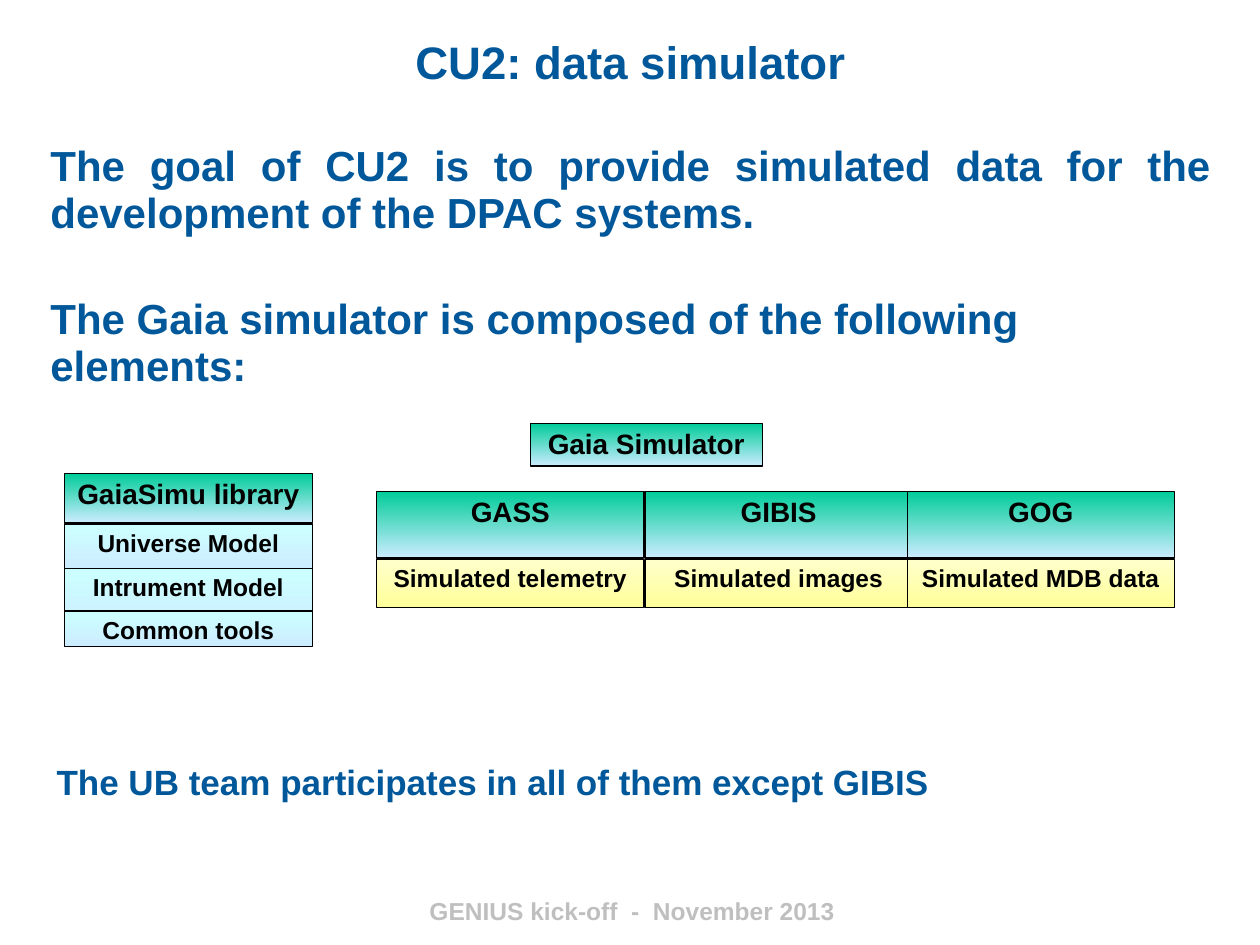
from pptx import Presentation
from pptx.dml.color import RGBColor
from pptx.enum.shapes import MSO_SHAPE
from pptx.enum.text import MSO_ANCHOR, PP_ALIGN
from pptx.oxml.xmlchemy import OxmlElement
from pptx.util import Inches, Pt

RECTANGLE = MSO_SHAPE.RECTANGLE
TOP, MIDDLE = MSO_ANCHOR.TOP, MSO_ANCHOR.MIDDLE
LEFT, CENTER, JUSTIFY = PP_ALIGN.LEFT, PP_ALIGN.CENTER, PP_ALIGN.JUSTIFY

THEME = {
    "font": "Arial",
    "blue": "00589A",
    "black": "000000",
    "gray": "BFBFBF",
    "green": ("00CC99", "CCECFF"),
    "ice": ("CCFFFF", "CCECFF"),
    "yellow": ("FFFFCC", "FFFF99"),
    "title": 26,
    "body": 24,
    "closing": 20,
    "heading": 16,
    "label": 14,
    "spacing": 0.93,
    "outline": 0.75,
}

TITLE = "CU2: data simulator"
STATEMENTS = [
    ("The goal of CU2 is to provide simulated data for the development of the DPAC systems.", JUSTIFY),
    ("The Gaia simulator is composed of the following elements:", LEFT),
]
CLOSING = "The UB team participates in all of them except GIBIS"
FOOTER = "GENIUS kick-off  -  November 2013"

SIMULATOR = ("Gaia Simulator", (4.21, 3.36, 1.84, 0.34))
LIBRARY_LEFT, LIBRARY_WIDTH = 0.51, 1.97
LIBRARY = [
    ("GaiaSimu library", 3.76, 0.39, "green", "heading"),
    ("Universe Model", 4.16, 0.36, "ice", "label"),
    ("Intrument Model", 4.51, 0.5, "ice", "label"),
    ("Common tools", 4.85, 0.28, "ice", "label"),
]
GENERATOR_WIDTH = 2.12
GENERATORS = [
    ("GASS", "Simulated telemetry", 2.99),
    ("GIBIS", "Simulated images", 5.12),
    ("GOG", "Simulated MDB data", 7.2),
]


def place(shape, box):
    shape.left, shape.top, shape.width, shape.height = map(Inches, box)


def style(paragraph, size, color, align):
    paragraph.alignment = align
    for run in paragraph.runs:
        run.font.name = THEME["font"]
        run.font.size = Pt(THEME[size])
        run.font.bold = True
        run.font.color.rgb = RGBColor.from_string(THEME[color])


def write(shape, text, size, color, align, anchor=TOP, wrap=True):
    frame = shape.text_frame
    frame.text = text
    frame.word_wrap = wrap
    frame.vertical_anchor = anchor
    style(frame.paragraphs[0], size, color, align)


def add_line(slide, text, box, size, color, align):
    write(slide.shapes.add_textbox(*map(Inches, box)), text, size, color, align)


def add_block(slide, text, box, gradient, size):
    block = slide.shapes.add_shape(RECTANGLE, *map(Inches, box))
    block.shadow.inherit = False
    block.fill.gradient()
    block.fill.gradient_angle = 270
    for stop, color in zip(block.fill.gradient_stops, THEME[gradient]):
        stop.color.rgb = RGBColor.from_string(color)
    block.line.color.rgb = RGBColor.from_string(THEME["black"])
    block.line.width = Pt(THEME["outline"])
    write(block, text, size, "black", CENTER, wrap=False)
    block.text_frame.paragraphs[0].line_spacing = THEME["spacing"]


def fill_body(body):
    place(body, (0.3, 1.09, 9.41, 1.5))
    frame = body.text_frame
    frame.text = "\n".join(text for text, _ in STATEMENTS)
    frame.vertical_anchor = TOP
    for index, (paragraph, (_, align)) in enumerate(zip(frame.paragraphs, STATEMENTS)):
        properties = paragraph._p.get_or_add_pPr()
        properties.set("marL", "0")
        properties.set("indent", "0")
        properties.append(OxmlElement("a:buNone"))
        paragraph.line_spacing = THEME["spacing"]
        paragraph.space_before = Pt(34 if index else 0)
        style(paragraph, "body", "blue", align)


def main():
    """Build the CU2 data simulator slide."""
    deck = Presentation()
    deck.slide_width, deck.slide_height = Inches(10), Inches(7.5)
    slide = deck.slides.add_slide(deck.slide_layouts[1])
    title, body = slide.placeholders
    place(title, (0.2, 0.21, 9.61, 0.55))
    write(title, TITLE, "title", "blue", CENTER, MIDDLE)
    fill_body(body)

    name, box = SIMULATOR
    add_block(slide, name, box, "green", "heading")
    for name, top, height, gradient, size in LIBRARY:
        add_block(slide, name, (LIBRARY_LEFT, top, LIBRARY_WIDTH, height), gradient, size)
    for name, output, left in GENERATORS:
        add_block(slide, output, (left, 4.44, GENERATOR_WIDTH, 0.38), "yellow", "label")
        add_block(slide, name, (left, 3.9, GENERATOR_WIDTH, 0.53), "green", "heading")

    add_line(slide, CLOSING, (0.35, 5.99, 9.29, 0.44), "closing", "blue", JUSTIFY)
    add_line(slide, FOOTER, (3.31, 7.06, 3.82, 0.34), "label", "gray", LEFT)
    deck.save("out.pptx")


if __name__ == "__main__":
    main()
